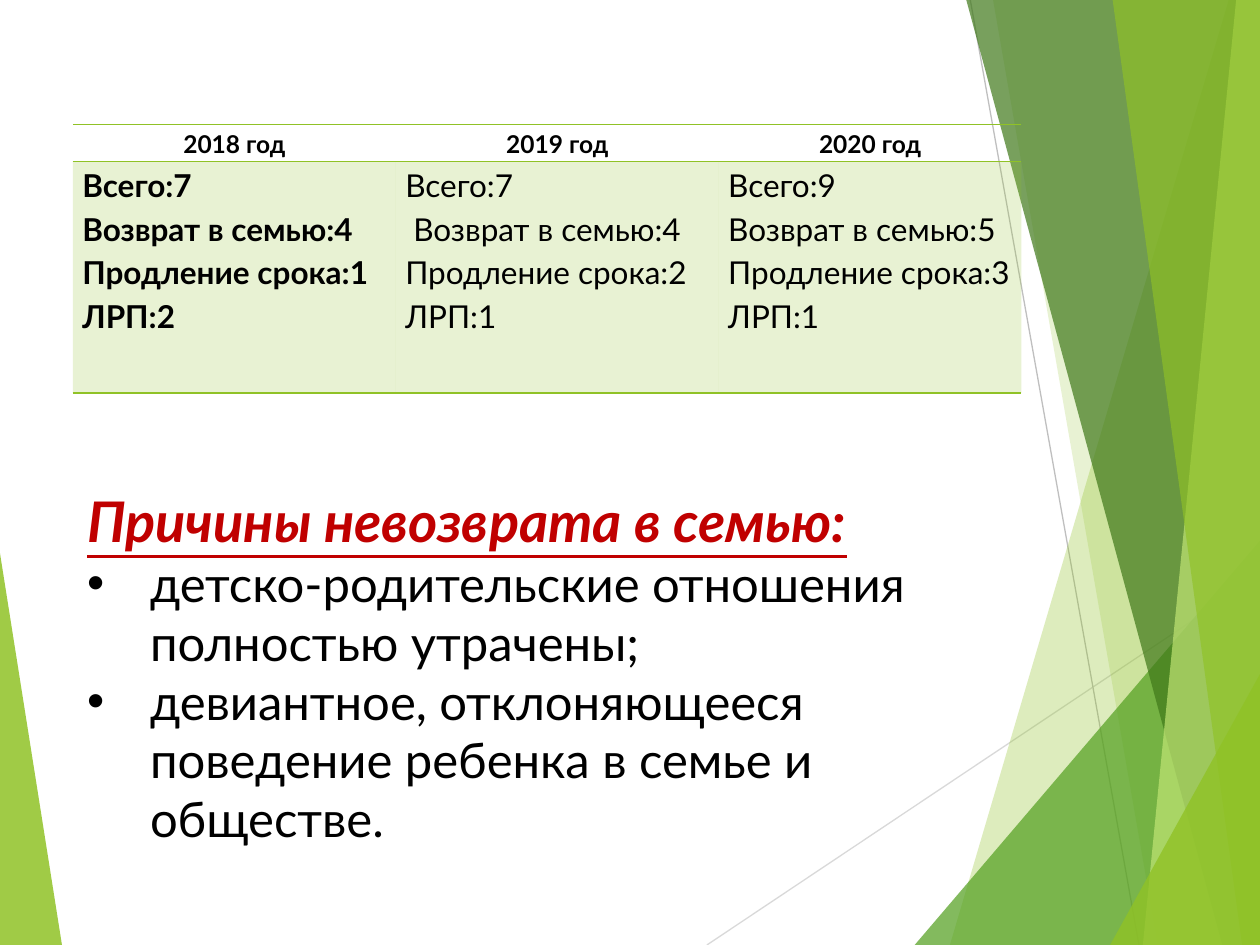
from dataclasses import dataclass

from lxml import etree
from pptx import Presentation
from pptx import util as u
from pptx.dml import color
from pptx.enum import shapes, text
from pptx.oxml import ns

Cm, Pt = u.Cm, u.Pt


@dataclass(frozen=True)
class Theme:
    """Colours, font and type sizes of the slide."""
    font: str = "Lato"
    ink: str = "000000"
    accent: str = "C00000"
    lime: str = "90C226"
    green: str = "54A021"
    forest: str = "3F7819"
    pale: str = "C0E474"
    light_line: str = "D9D9D9"
    mid_line: str = "BFBFBF"
    title: int = 32
    body: int = 28
    cell: int = 18
    header: int = 14


THEME = Theme()
WIDTH, HEIGHT = 25.4, 19.05
NO_GRID_STYLE = "{2D5ABB26-0587-4C30-8999-92F81FD0307C}"

YEARS = {
    "2018 год": ["Всего:7", "Возврат в семью:4", "Продление срока:1", "ЛРП:2"],
    "2019 год": ["Всего:7", " Возврат в семью:4", "Продление срока:2", "ЛРП:1"],
    "2020 год": ["Всего:9", "Возврат в семью:5", "Продление срока:3", "ЛРП:1"],
}
HEADING = "Причины невозврата в семью:"
REASONS = [
    "детско-родительские отношения полностью утрачены;",
    "девиантное, отклоняющееся поведение ребенка в семье и обществе.",
]


def rgb(value):
    """Turn a hex string into a colour."""
    return color.RGBColor.from_string(value)


def sub(parent, tag, **attrs):
    """Append a DrawingML child element."""
    return etree.SubElement(parent, ns.qn(tag), **attrs)


def set_fill(fill, value, opacity):
    """Apply a solid fill with an opacity in percent."""
    fill.solid()
    fill.fore_color.rgb = rgb(value)
    clr = fill._xPr.find(".//" + ns.qn("a:srgbClr"))
    sub(clr, "a:alpha", val=str(opacity * 1000))


def format_runs(p, size, value=THEME.ink, **styles):
    """Give every run of a paragraph the theme font and the given look."""
    for r in p.runs:
        r.font.name, r.font.size = THEME.font, Pt(size)
        r.font.color.rgb = rgb(value)
        for name, state in styles.items():
            setattr(r.font, name, state)


def place(sp, left, top, width, height):
    """Move a shape to a box given in centimetres."""
    sp.left, sp.top, sp.width, sp.height = map(Cm, (left, top, width, height))


def add_facet(s, points, value, opacity):
    """Draw one translucent polygon."""
    corners = [(Cm(x), Cm(y)) for x, y in points]
    builder = s.shapes.build_freeform(*corners[0])
    builder.add_line_segments(corners[1:], close=True)
    sp = builder.convert_to_shape()
    sp.shadow.inherit = False
    sp.line.fill.background()
    set_fill(sp.fill, value, opacity)


def add_ray(s, start, end, value):
    """Draw one thin decorative line."""
    ends = [Cm(v) for v in (*start, *end)]
    line = s.shapes.add_connector(shapes.MSO_CONNECTOR.STRAIGHT, *ends)
    line.line.color.rgb, line.line.width = rgb(value), Pt(0.75)
    sub(line._element.spPr, "a:effectLst")


def add_backdrop(s, left, top, width, height):
    """Draw the green facets along both sides of the box."""
    right, bottom = left + width, top + height

    def band(top_x, bottom_x):
        """Outline a band that runs from a slanted edge to the right side."""
        return [(left + top_x, top), (left + bottom_x, bottom), (right, bottom), (right, top)]

    def wedge(bottom_x, rise):
        """Outline a triangle in the lower right corner."""
        return [(left + bottom_x, bottom), (right, top + rise), (right, bottom)]

    corner = [(left, top + 11.15), (left + 1.25, bottom), (left, bottom)]
    add_facet(s, corner, THEME.lime, 85)
    add_ray(s, (left + 14.25, bottom), (right, top + 11.6), THEME.light_line)
    add_ray(s, (left + 19.56, top), (left + 22.96, bottom), THEME.mid_line)
    for outline, value, opacity in [
        (band(24.77, 19.15), THEME.lime, 30),
        (band(20.02, 23.34), THEME.lime, 20),
        (wedge(18.44, 10.9), THEME.green, 72),
        (band(19.48, 24.64), THEME.forest, 70),
        (band(24.92, 23.04), THEME.pale, 70),
        (band(22.43, 25.04), THEME.lime, 65),
        (wedge(22.38, 13.59), THEME.lime, 80),
    ]:
        add_facet(s, outline, value, opacity)


def set_border(cell, tag, points):
    """Add one horizontal border to a cell, ahead of its other properties."""
    tc_pr = cell._tc.get_or_add_tcPr()
    line = sub(tc_pr, tag, w=str(Pt(points)))
    sub(sub(line, "a:solidFill"), "a:srgbClr", val=THEME.lime)
    tc_pr.insert(0, line)


def fill_cell(cell, lines, size, align, bold):
    """Write the lines of a table cell."""
    cell.margin_left = cell.margin_right = Cm(0.19)
    cell.margin_top = cell.margin_bottom = 0
    cell.text_frame.text = "\n".join(lines)
    for p in cell.text_frame.paragraphs:
        p.alignment, p.line_spacing = align, 1.15
        format_runs(p, size, bold=bold)


def add_year_table(s, left, top, width, height):
    """Place the table with one column for each year."""
    box = map(Cm, (left, top, width, height))
    table = s.shapes.add_table(2, len(YEARS), *box).table
    table.horz_banding = False
    table._tbl.tblPr.find(ns.qn("a:tableStyleId")).text = NO_GRID_STYLE
    header_height, last_width = 0.74, 6.1
    table.rows[0].height = Cm(header_height)
    table.rows[1].height = Cm(height - header_height)
    for i, (year, lines) in enumerate(YEARS.items()):
        is_last = i == len(YEARS) - 1
        table.columns[i].width = Cm(last_width if is_last else (width - last_width) / 2)
        head, body = table.cell(0, i), table.cell(1, i)
        fill_cell(head, [year], THEME.header, text.PP_ALIGN.CENTER, True)
        fill_cell(body, lines, THEME.cell, text.PP_ALIGN.JUSTIFY, i == 0)
        head.fill.background()
        set_fill(body.fill, THEME.lime, 20)
        set_border(head, "a:lnB", 0.5)
        set_border(head, "a:lnT", 1)
        set_border(body, "a:lnB", 1)


def add_reasons(s, left, top, width, height):
    """Place the heading and the bulleted list below it."""
    title, body = s.shapes.title, s.placeholders[1]
    step = 1.35
    place(title, left, top, width, step + 0.25)
    place(body, left, top + step, width, height - step)
    title.text_frame.text = HEADING
    body.text_frame.text = "\n".join(REASONS)
    for sp in (title, body):
        s.shapes._spTree.append(sp._element)
        tf = sp.text_frame
        tf.auto_size, tf.word_wrap = text.MSO_AUTO_SIZE.NONE, True
        tf.vertical_anchor = text.MSO_ANCHOR.TOP
        for p in tf.paragraphs:
            p.alignment, p.space_before = text.PP_ALIGN.LEFT, Pt(0)
    format_runs(title.text_frame.paragraphs[0], THEME.title, THEME.accent,
                bold=True, italic=True, underline=True)
    for p in body.text_frame.paragraphs:
        p_pr = p._p.get_or_add_pPr()
        p_pr.set("marL", str(Cm(1.27)))
        p_pr.set("indent", str(Cm(-1.27)))
        sub(p_pr, "a:buFont", typeface="Arial")
        sub(p_pr, "a:buChar", char="•")
        format_runs(p, THEME.body)


def main():
    """Build the slide and save it."""
    prs = Presentation()
    prs.slide_width, prs.slide_height = Cm(WIDTH), Cm(HEIGHT)
    s = prs.slides.add_slide(prs.slide_layouts[1])
    add_backdrop(s, 0, 0, WIDTH, HEIGHT)
    add_year_table(s, 1.47, 2.51, 19.12, 5.41)
    add_reasons(s, 1.5, 9.68, 19.8, 7.62)
    prs.save("out.pptx")


if __name__ == "__main__":
    main()
